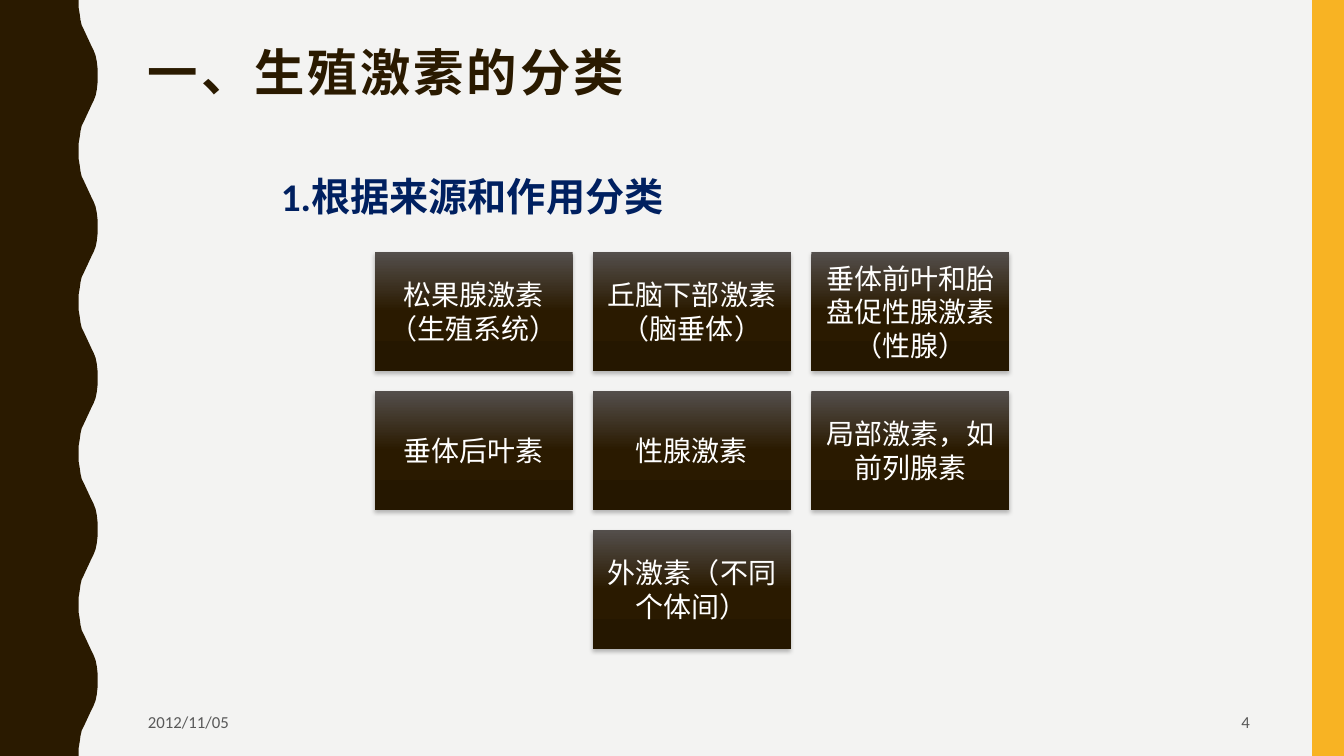
from copy import deepcopy
from dataclasses import dataclass

from lxml import etree
from pptx import Presentation
from pptx import util as u
from pptx.dml.color import RGBColor
from pptx.enum import shapes, text
from pptx.oxml import ns


@dataclass(frozen=True)
class Theme:
    paper: str = "F3F3F2"
    brown: str = "2A1A00"
    amber: str = "F8B323"
    navy: str = "002060"
    grey: str = "595959"
    white: str = "FFFFFF"
    shadow: str = "000000"
    tile_gradient: tuple = ((0, "544F4C"), (0.5, "2A1A00"), (1, "251700"))
    title_size: int = 36
    heading_size: int = 28
    tile_size: int = 20
    footer_size: int = 12
    title_font: str = "Noto Sans CJK SC"
    body_font: str = "Calibri"


THEME = Theme()
SLIDE_W, SLIDE_H = 33.87, 19.05

# Half a wave of the left edge, in hundredths of a centimetre
HALF_WAVE = [(198, 0), (198, 18), (201, 36), (203, 51), (206, 64), (211, 74),
             (231, 117), (236, 127), (241, 140), (244, 155), (246, 173), (246, 190)]
WAVE_LENGTH, WAVE_COUNT = 381, 5

HORMONE_ROWS = [
    ["松果腺激素（生殖系统）", "丘脑下部激素（脑垂体）", "垂体前叶和胎盘促性腺激素（性腺）"],
    ["垂体后叶素", "性腺激素", "局部激素，如前列腺素"],
    ["外激素（不同个体间）"],
]
TILE_W, TILE_H = 4.98, 3.0
PITCH_X, PITCH_Y = 5.5, 3.5
TILES_CENTRE, TILES_TOP = 17.44, 6.35


def rgb(colour):
    return RGBColor.from_string(colour)


def write(frame, words, size, colour, font=THEME.body_font, bold=False,
          align=text.PP_ALIGN.LEFT, spacing=None):
    frame.text = words
    frame.word_wrap = True
    paragraph = frame.paragraphs[0]
    paragraph.alignment = align
    run = paragraph.runs[0]
    run.font.size = u.Pt(size)
    run.font.bold = bold
    run.font.color.rgb = rgb(colour)
    run.font.name = font
    properties = run._r.get_or_add_rPr()
    etree.SubElement(properties, ns.qn("a:ea")).set("typeface", font)
    if spacing:
        properties.set("spc", str(spacing * 100))
    return paragraph


def add_label(slide, box, words, size, colour, anchor=text.MSO_ANCHOR.MIDDLE, **style):
    label = slide.shapes.add_textbox(*map(u.Cm, box))
    label.text_frame.vertical_anchor = anchor
    return write(label.text_frame, words, size, colour, **style)


def paint(shape, colour):
    shape.shadow.inherit = False
    shape.fill.solid()
    shape.fill.fore_color.rgb = rgb(colour)
    shape.line.fill.background()


def add_wavy_edge(slide):
    mirrored = [(x, WAVE_LENGTH - y) for x, y in reversed(HALF_WAVE[:-1])]
    wave = HALF_WAVE + mirrored
    outline = [(x, y + n * WAVE_LENGTH) for n in range(WAVE_COUNT) for x, y in wave]
    builder = slide.shapes.build_freeform(0, 0, scale=u.Cm(0.01))
    builder.add_line_segments(outline + [(0, WAVE_LENGTH * WAVE_COUNT)], close=True)
    paint(builder.convert_to_shape(), THEME.brown)


def add_stripe(slide):
    width = 0.8
    stripe = slide.shapes.add_shape(
        shapes.MSO_SHAPE.RECTANGLE,
        *map(u.Cm, (SLIDE_W - width, 0, width, SLIDE_H)))
    paint(stripe, THEME.amber)


def fill_gradient(shape):
    shape.fill.gradient()
    shape.fill.gradient_angle = 270
    first = shape.fill.gradient_stops[0]._gs
    first.addnext(deepcopy(first))
    for stop, (position, colour) in zip(shape.fill.gradient_stops, THEME.tile_gradient):
        stop.position = position
        stop.color.rgb = rgb(colour)


def drop_shadow(shape):
    shape.shadow.inherit = False
    effects = shape._element.spPr.find(ns.qn("a:effectLst"))
    shadow = etree.SubElement(effects, ns.qn("a:outerShdw"), blurRad=str(u.Pt(3)),
                              dist=str(u.Pt(2)), dir="5400000", rotWithShape="0")
    colour = etree.SubElement(shadow, ns.qn("a:srgbClr"), val=THEME.shadow)
    etree.SubElement(colour, ns.qn("a:alpha"), val="25000")


def add_tile(slide, left, top, hormone):
    tile = slide.shapes.add_shape(shapes.MSO_SHAPE.RECTANGLE,
                                  *map(u.Cm, (left, top, TILE_W, TILE_H)))
    fill_gradient(tile)
    tile.line.fill.background()
    drop_shadow(tile)
    frame = tile.text_frame
    frame.margin_left = frame.margin_right = u.Cm(0.2)
    frame.margin_top = frame.margin_bottom = u.Cm(0.2)
    frame.vertical_anchor = text.MSO_ANCHOR.MIDDLE
    write(frame, hormone, THEME.tile_size, THEME.white, align=text.PP_ALIGN.CENTER)


def add_hormone_tiles(slide):
    for row, hormones in enumerate(HORMONE_ROWS):
        row_width = (len(hormones) - 1) * PITCH_X + TILE_W
        row_left = TILES_CENTRE - row_width / 2
        for column, hormone in enumerate(hormones):
            add_tile(slide, row_left + column * PITCH_X, TILES_TOP + row * PITCH_Y, hormone)


def main():
    deck = Presentation()
    deck.slide_width, deck.slide_height = u.Cm(SLIDE_W), u.Cm(SLIDE_H)
    slide = deck.slides.add_slide(deck.slide_layouts[6])

    # Background and side decoration
    slide.background.fill.solid()
    slide.background.fill.fore_color.rgb = rgb(THEME.paper)
    add_wavy_edge(slide)
    add_stripe(slide)

    # Title
    title = add_label(slide, (3.48, 1.07, 28.27, 1.65), "一、生殖激素的分类",
                      THEME.title_size, THEME.brown, font=THEME.title_font,
                      bold=True, spacing=2)
    title.line_spacing = 0.9

    # Hormone classes
    add_hormone_tiles(slide)

    # Footer
    add_label(slide, (3.48, 17.7, 6.48, 0.97), "2012/11/05",
              THEME.footer_size, THEME.grey)
    add_label(slide, (23.93, 17.7, 7.82, 0.97), "4",
              THEME.footer_size, THEME.grey, align=text.PP_ALIGN.RIGHT)

    # Section heading
    add_label(slide, (6.83, 4.22, 10.31, 1.45), "1.根据来源和作用分类",
              THEME.heading_size, THEME.navy, anchor=text.MSO_ANCHOR.TOP, bold=True)

    deck.save("out.pptx")


if __name__ == "__main__":
    main()
